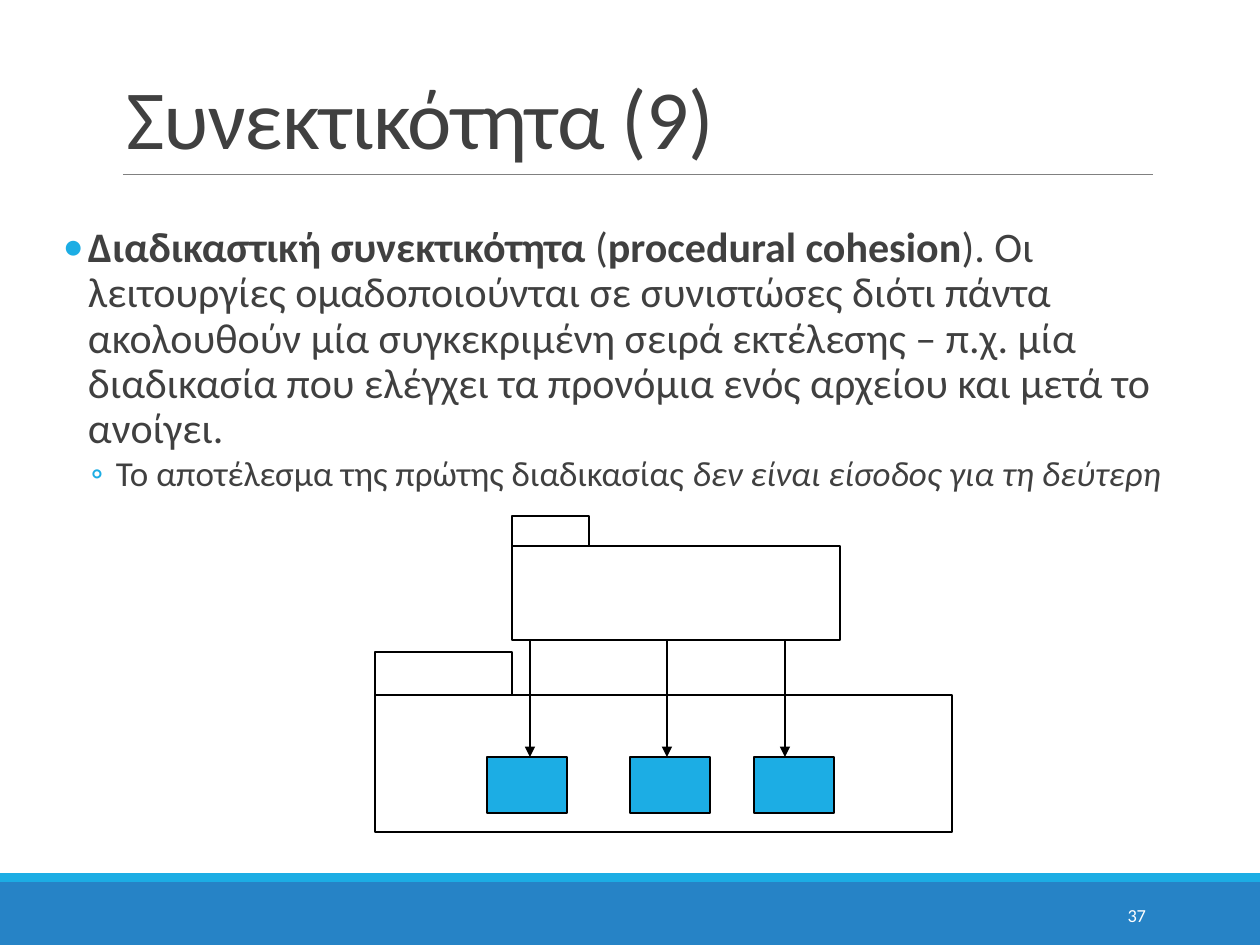
from lxml import etree
from pptx import Presentation
from pptx import util as u
from pptx.dml.color import RGBColor
from pptx.enum import shapes, text
from pptx.oxml.ns import qn

SCALE = 914400 / 126
INK, SKY, BLUE, BLACK, WHITE = "404040", "1CADE4", "2683C6", "000000", "FFFFFF"


def px(*lengths):
    return [u.Emu(round(length * SCALE)) for length in lengths]


def paint(color, value):
    color.rgb = RGBColor.from_string(value)


deck = Presentation()
deck.slide_width, deck.slide_height = px(1260, 945)
page = deck.slides.add_slide(deck.slide_layouts[6])

rectangles = [
    ((0, 882, 1260, 63), BLUE, None),
    ((0, 873, 1260, 9), SKY, None),
    ((375, 695, 577, 137), None, BLACK),
    ((375, 652, 137, 43), None, BLACK),
    ((487, 757, 80, 56), SKY, BLACK),
    ((630, 757, 80, 56), SKY, BLACK),
    ((754, 757, 80, 56), SKY, BLACK),
    ((512, 546, 328, 94), None, BLACK),
    ((512, 516, 77, 30), None, BLACK),
]
for place, fill, outline in rectangles:
    box = page.shapes.add_shape(shapes.MSO_SHAPE.RECTANGLE, *px(*place))
    box.shadow.inherit = False
    if fill:
        box.fill.solid()
        paint(box.fill.fore_color, fill)
    else:
        box.fill.background()
    if outline:
        paint(box.line.color, outline)
        box.line.width = u.Pt(0.75)
    else:
        box.line.fill.background()

lines = [((123, 174, 1153, 174), "808080", 0.5, False)]
lines += [((x, 640, x, 757), BLACK, 0.75, True) for x in (530, 667, 785)]
for ends, color, width, arrow in lines:
    line = page.shapes.add_connector(shapes.MSO_CONNECTOR.STRAIGHT, *px(*ends))
    paint(line.line.color, color)
    line.line.width = u.Pt(width)
    if arrow:
        etree.SubElement(line.line._get_or_add_ln(), qn("a:tailEnd"), type="triangle")
    etree.SubElement(line._element.spPr, qn("a:effectLst"))

LEFT, RIGHT = text.PP_ALIGN.LEFT, text.PP_ALIGN.RIGHT
TOP, MIDDLE, BOTTOM = text.MSO_ANCHOR.TOP, text.MSO_ANCHOR.MIDDLE, text.MSO_ANCHOR.BOTTOM
title = [dict(size=48, color=INK, spacing=0.85, tracking="-50",
              spans=[("Συνεκτικότητα (9)", "")])]
body = [
    dict(size=24, color=INK, spacing=0.9, after=2, bullet="•", indent=25, spans=[
        ("Διαδικαστική συνεκτικότητα ", "b"),
        ("(", ""),
        ("procedural cohesion", "b"),
        ("). Οι λειτουργίες ομαδοποιούνται σε συνιστώσες διότι πάντα ακολουθούν "
         "μία συγκεκριμένη σειρά εκτέλεσης – π.χ. μία διαδικασία που ελέγχει τα "
         "προνόμια ενός αρχείου και μετά το ανοίγει.", "")]),
    dict(size=20, color=INK, spacing=0.9, after=4, bullet="◦", indent=53, level=1, spans=[
        ("Το αποτέλεσμα της πρώτης διαδικασίας ", ""),
        ("δεν είναι είσοδος για τη δεύτερη", "i")]),
]
number = [dict(size=10.5, color=WHITE, align=RIGHT, spans=[("37", "")])]

for place, margin, anchor, paragraphs in [
    ((113, 14, 1040, 159), 13, BOTTOM, title),
    ((63, 220, 1134, 370), 0, TOP, body),
    ((1023, 890, 136, 50), 13, MIDDLE, number),
]:
    frame = page.shapes.add_textbox(*px(*place)).text_frame
    frame.word_wrap = True
    frame.vertical_anchor = anchor
    frame.margin_left, frame.margin_right = px(margin, margin)
    for index, item in enumerate(paragraphs):
        para = frame.add_paragraph() if index else frame.paragraphs[0]
        para.level = item.get("level", 0)
        para.alignment = item.get("align", LEFT)
        para.line_spacing = item.get("spacing", 1.0)
        para.space_after = u.Pt(item.get("after", 0))
        if "bullet" in item:
            props = para._p.get_or_add_pPr()
            indent, hang = px(item["indent"], -25)
            props.set("marL", str(indent))
            props.set("indent", str(hang))
            tint = etree.SubElement(props, qn("a:buClr"))
            etree.SubElement(tint, qn("a:srgbClr"), val=SKY)
            etree.SubElement(props, qn("a:buFont"), typeface="Calibri")
            etree.SubElement(props, qn("a:buChar"), char=item["bullet"])
        for words, style in item["spans"]:
            span = para.add_run()
            span.text = words
            span.font.name = "Calibri"
            span.font.size = u.Pt(item["size"])
            span.font.bold = style == "b"
            span.font.italic = style == "i"
            paint(span.font.color, item["color"])
            if "tracking" in item:
                span._r.get_or_add_rPr().set("spc", item["tracking"])

deck.save("out.pptx")
